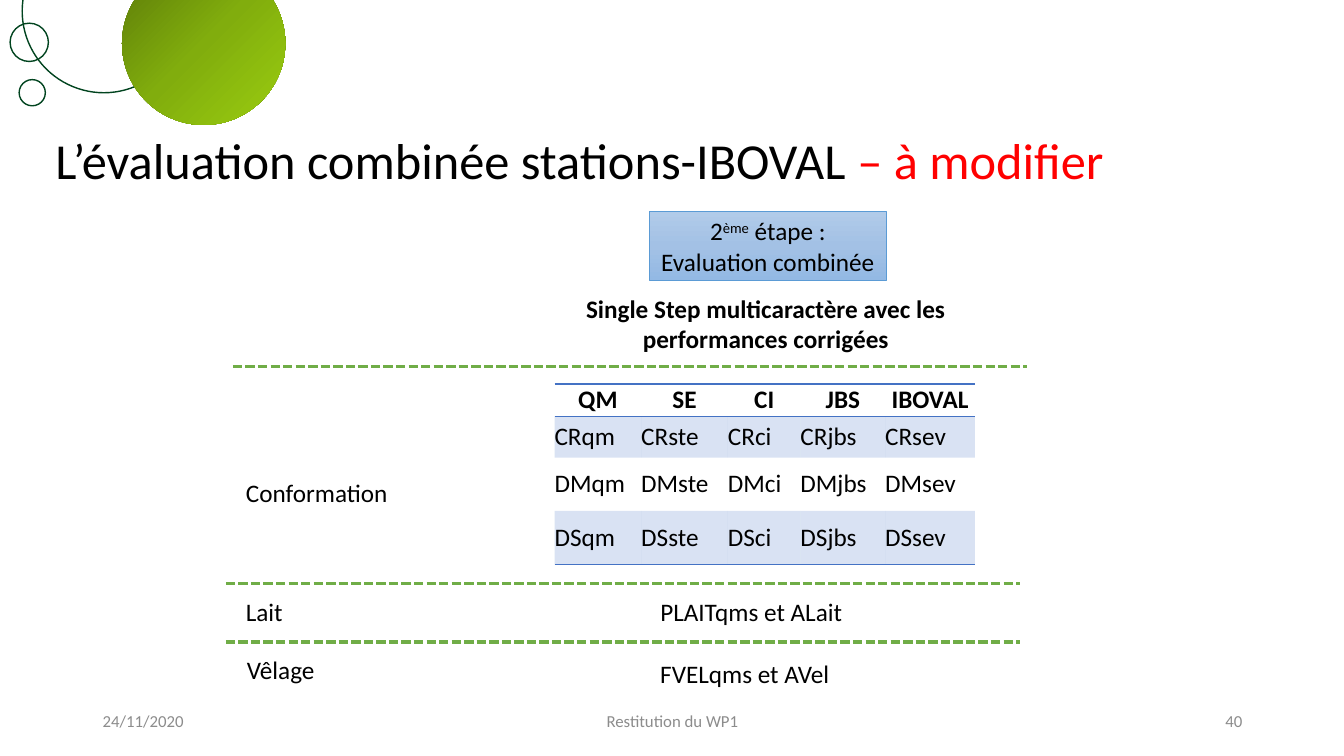
from copy import deepcopy

from lxml import etree
from pptx import Presentation
from pptx.dml.color import RGBColor
from pptx.enum.dml import MSO_LINE
from pptx.enum.shapes import MSO_CONNECTOR, MSO_SHAPE
from pptx.enum.text import MSO_ANCHOR, PP_ALIGN
from pptx.oxml.ns import qn
from pptx.util import Inches, Pt

LEFT, CENTER, RIGHT = PP_ALIGN.LEFT, PP_ALIGN.CENTER, PP_ALIGN.RIGHT
TOP, MIDDLE = MSO_ANCHOR.TOP, MSO_ANCHOR.MIDDLE
OVAL, RECTANGLE = MSO_SHAPE.OVAL, MSO_SHAPE.RECTANGLE
STRAIGHT = MSO_CONNECTOR.STRAIGHT
DASH = MSO_LINE.SQUARE_DOT
FONT = "Calibri"
BLACK, RED, GREY = "000000", "FF0000", "8C8C8C"
DARK_GREEN, GREEN, BLUE = "01441F", "70AD47", "4472C4"
NO_TABLE_STYLE = "{2D5ABB26-0587-4C30-8999-92F81FD0307C}"

TRAITS = [
    ["QM", "SE", "CI", "JBS", "IBOVAL"],
    ["CRqm", "CRste", "CRci", "CRjbs", "CRsev"],
    ["DMqm", "DMste", "DMci", "DMjbs", "DMsev"],
    ["DSqm", "DSste", "DSci", "DSjbs", "DSsev"],
]
TRAIT_WIDTHS = [0.86, 0.86, 0.72, 0.84, 0.89]
TRAIT_HEIGHTS = [0.32, 0.41, 0.53, 0.53]


def rgb(color):
    return RGBColor.from_string(color)


def add_run(paragraph, text, size=18, color=BLACK, bold=False):
    run = paragraph.add_run()
    run.text = text
    run.font.name = FONT
    run.font.size = Pt(size)
    run.font.bold = bold
    run.font.color.rgb = rgb(color)
    return run


def add_label(slide, box, text, size=18, color=BLACK, bold=False,
              align=LEFT, anchor=TOP, wrap=True):
    frame = slide.shapes.add_textbox(*map(Inches, box)).text_frame
    frame.word_wrap = wrap
    frame.vertical_anchor = anchor
    paragraph = frame.paragraphs[0]
    paragraph.alignment = align
    add_run(paragraph, text, size, color, bold)
    return paragraph


def add_figure(slide, kind, box, line=None, width=1, gradient=None, angle=0):
    figure = slide.shapes.add_shape(kind, *map(Inches, box))
    figure.shadow.inherit = False
    if gradient:
        fill_gradient(figure, gradient, angle)
    else:
        figure.fill.background()
    if line:
        figure.line.color.rgb = rgb(line)
        figure.line.width = Pt(width)
    else:
        figure.line.fill.background()
    return figure


def fill_gradient(figure, colors, angle):
    figure.fill.gradient()
    figure.fill.gradient_angle = 360 - angle
    stop_list = figure._element.spPr.find(".//" + qn("a:gsLst"))
    stop_list.insert(1, deepcopy(stop_list[0]))
    for stop, position, color in zip(figure.fill.gradient_stops, (0, 0.5, 1), colors):
        stop.position = position
        stop.color.rgb = rgb(color)


def add_separator(slide, left, top, length=7.88):
    separator = slide.shapes.add_connector(
        STRAIGHT, Inches(left), Inches(top), Inches(left + length), Inches(top))
    separator.line.color.rgb = rgb(GREEN)
    separator.line.width = Pt(2.25)
    separator.line.dash_style = DASH
    etree.SubElement(separator._element.spPr, qn("a:effectLst"))


def add_border(cell, side):
    border = etree.SubElement(cell._tc.get_or_add_tcPr(), qn(side), w=str(Pt(1)))
    solid = etree.SubElement(border, qn("a:solidFill"))
    etree.SubElement(solid, qn("a:srgbClr"), val=BLUE)


def fill_cell(cell, tinted):
    if not tinted:
        cell.fill.background()
        return
    cell.fill.solid()
    cell.fill.fore_color.rgb = rgb(BLUE)
    tint = cell._tc.tcPr.find(qn("a:solidFill"))[0]
    etree.SubElement(tint, qn("a:alpha"), val="20000")


def add_trait_table(slide):
    table = slide.shapes.add_table(
        len(TRAITS), len(TRAIT_WIDTHS), Inches(5.5), Inches(3.81),
        Inches(sum(TRAIT_WIDTHS)), Inches(sum(TRAIT_HEIGHTS))).table
    table._tbl.tblPr.find(qn("a:tableStyleId")).text = NO_TABLE_STYLE
    for column, width in zip(table.columns, TRAIT_WIDTHS):
        column.width = Inches(width)
    for row, height in zip(table.rows, TRAIT_HEIGHTS):
        row.height = Inches(height)
    for r, traits in enumerate(TRAITS):
        header = r == 0
        for c, trait in enumerate(traits):
            cell = table.cell(r, c)
            cell.margin_left = cell.margin_right = 0
            cell.margin_top = cell.margin_bottom = 0
            cell.vertical_anchor = MIDDLE
            paragraph = cell.text_frame.paragraphs[0]
            paragraph.alignment = CENTER if header else LEFT
            add_run(paragraph, trait, bold=header)
            if header:
                add_border(cell, "a:lnT")
            if header or r == len(TRAITS) - 1:
                add_border(cell, "a:lnB")
            fill_cell(cell, r % 2 == 1)


def add_step(slide):
    step = add_figure(slide, RECTANGLE, (6.44, 2.1, 2.35, 0.68), "5B9BD5", 0.5,
                      ("B1CBE9", "A3C1E5", "93B9E4"), 90)
    step.text_frame.word_wrap = True
    step.text_frame.vertical_anchor = MIDDLE
    paragraph = step.text_frame.paragraphs[0]
    paragraph.alignment = CENTER
    add_run(paragraph, "2")
    ordinal = add_run(paragraph, "ème")
    ordinal.font._element.set("baseline", "30000")
    add_run(paragraph, " étape : Evaluation combinée")


def add_circles(slide):
    add_figure(slide, OVAL, (0.22, -0.7, 1.62, 1.62), DARK_GREEN)
    add_figure(slide, OVAL, (1.21, -0.38, 1.62, 1.62),
               gradient=("5B7A09", "81AD0D", "9ACD10"), angle=45)
    add_figure(slide, OVAL, (0.1, 0.23, 0.38, 0.38), DARK_GREEN)
    add_figure(slide, OVAL, (0.19, 0.79, 0.26, 0.26), DARK_GREEN)


def main():
    deck = Presentation()
    deck.slide_width, deck.slide_height = Inches(13.33), Inches(7.5)
    slide = deck.slides.add_slide(deck.slide_layouts[6])

    add_circles(slide)
    title = add_label(slide, (0.45, 1.27, 11.5, 0.7),
                      "L’évaluation combinée stations-IBOVAL ", 36, anchor=MIDDLE)
    title.line_spacing = 0.9
    add_run(title, "– à modifier", 36, RED)

    add_step(slide)
    add_label(slide, (5.5, 2.86, 4.19, 0.71),
              "Single Step multicaractère avec les performances corrigées",
              bold=True, align=CENTER)
    add_trait_table(slide)

    for left, top, width, text in (
            (2.34, 4.69, 1.62, "Conformation"),
            (2.34, 5.87, 0.57, "Lait"),
            (2.35, 6.44, 0.88, "Vêlage"),
            (6.45, 5.87, 2.05, "PLAITqms et ALait"),
            (6.45, 6.48, 1.9, "FVELqms et AVel")):
        add_label(slide, (left, top, width, 0.4), text, wrap=False)
    for left, top in ((2.31, 3.64), (2.24, 5.79), (2.24, 6.37)):
        add_separator(slide, left, top)

    for left, width, text, align in (
            (0.92, 3, "24/11/2020", LEFT),
            (4.42, 4.5, "Restitution du WP1", CENTER),
            (9.42, 3, "40", RIGHT)):
        add_label(slide, (left, 6.95, width, 0.4), text, 12, GREY,
                  align=align, anchor=MIDDLE)

    deck.save("out.pptx")


if __name__ == "__main__":
    main()
